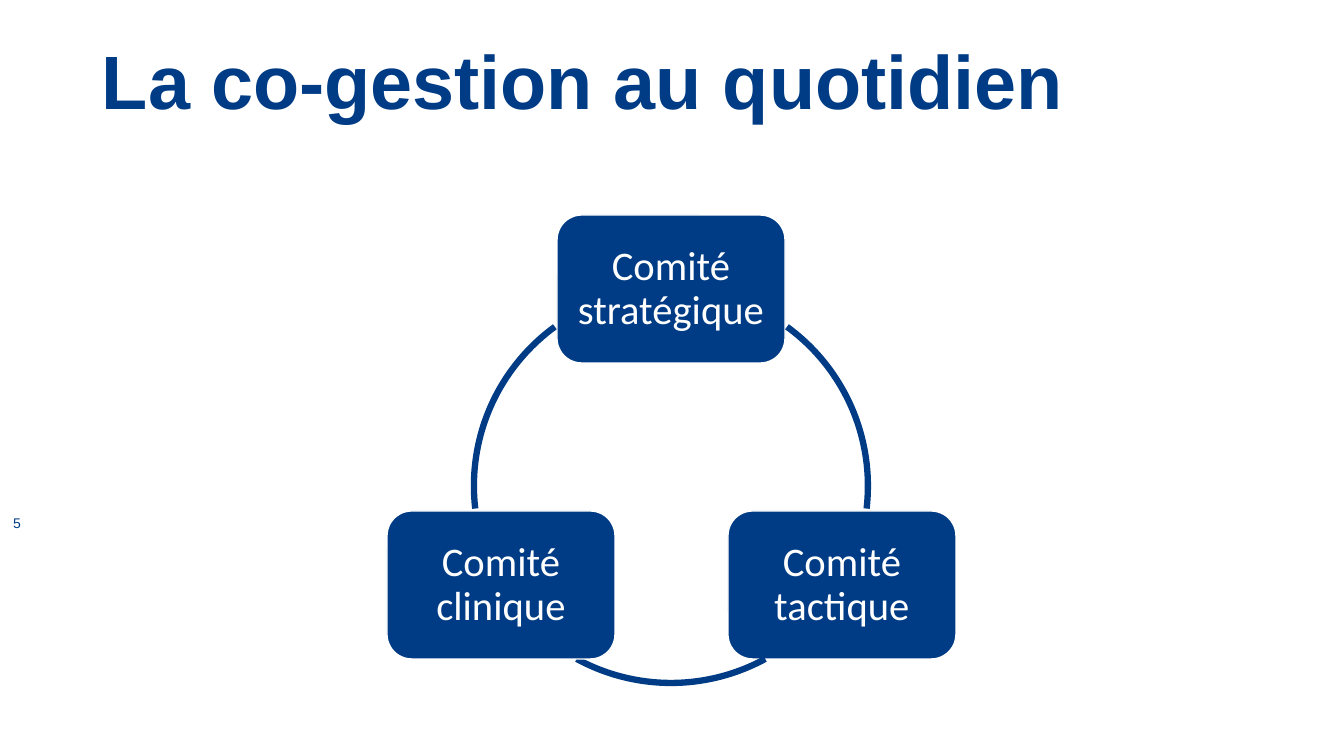
from dataclasses import dataclass

from pptx import Presentation
from pptx.dml.color import RGBColor
from pptx.enum.shapes import MSO_SHAPE
from pptx.enum.text import MSO_ANCHOR, PP_ALIGN
from pptx.shapes.autoshape import Shape
from pptx.slide import Slide
from pptx.util import Emu, Pt

EMU_PER_PX = 914400 / 100.8
NAVY = RGBColor(0x00, 0x3C, 0x85)
WHITE = RGBColor(0xFF, 0xFF, 0xFF)
ROUNDED, ARC = MSO_SHAPE.ROUNDED_RECTANGLE, MSO_SHAPE.ARC
TOP, MIDDLE = MSO_ANCHOR.TOP, MSO_ANCHOR.MIDDLE
LEFT, CENTER = PP_ALIGN.LEFT, PP_ALIGN.CENTER

COMMITTEE_WIDTH, COMMITTEE_HEIGHT = 228, 148
RING_LEFT, RING_TOP, RING_DIAMETER = 474, 289, 394
ARC_UNITS_PER_DEGREE = 0.6  # 60000 angle units per degree, scaled by 100000


@dataclass
class Committee:
    name: str
    left: int
    top: int
    # Ring arc that leaves this committee, clockwise, in degrees
    arc_start: float
    arc_end: float


COMMITTEES = [
    Committee("Comité stratégique", 557, 215, 306.1, 6.6),
    Committee("Comité tactique", 728, 511, 61.4, 118.6),
    Committee("Comité clinique", 387, 511, 173.4, 233.9),
]


def px(length: int) -> Emu:
    return Emu(round(length * EMU_PER_PX))


def write(shape: Shape, text: str, *, font: str = "Arial", size: int,
          color: RGBColor = NAVY, bold: bool = False,
          align: PP_ALIGN = CENTER, anchor: MSO_ANCHOR = MIDDLE,
          inset_x: int = 10, inset_y: int = 5, spacing: float = 1.0) -> None:
    frame = shape.text_frame
    frame.word_wrap = True
    frame.vertical_anchor = anchor
    frame.margin_left = frame.margin_right = px(inset_x)
    frame.margin_top = frame.margin_bottom = px(inset_y)
    paragraph = frame.paragraphs[0]
    paragraph.alignment = align
    paragraph.line_spacing = spacing
    run = paragraph.add_run()
    run.text = text
    run.font.name = font
    run.font.size = Pt(size)
    run.font.bold = bold
    run.font.color.rgb = color


def add_committee(slide: Slide, committee: Committee) -> None:
    box = slide.shapes.add_shape(
        ROUNDED, px(committee.left), px(committee.top),
        px(COMMITTEE_WIDTH), px(COMMITTEE_HEIGHT))
    box.shadow.inherit = False
    box.fill.solid()
    box.fill.fore_color.rgb = NAVY
    box.line.color.rgb = WHITE
    box.line.width = Pt(1)
    write(box, committee.name, font="Calibri", size=29, color=WHITE,
          inset_x=12, inset_y=12, spacing=0.9)


def add_ring_arc(slide: Slide, start: float, end: float) -> None:
    arc = slide.shapes.add_shape(
        ARC, px(RING_LEFT), px(RING_TOP), px(RING_DIAMETER), px(RING_DIAMETER))
    arc.shadow.inherit = False
    arc.adjustments[0] = start * ARC_UNITS_PER_DEGREE
    arc.adjustments[1] = end * ARC_UNITS_PER_DEGREE
    arc.fill.background()
    arc.line.color.rgb = NAVY
    arc.line.width = Pt(4.5)


def main() -> None:
    presentation = Presentation()
    presentation.slide_width, presentation.slide_height = px(1344), px(756)
    slide = presentation.slides.add_slide(presentation.slide_layouts[6])

    # Title and slide number
    title = slide.shapes.add_textbox(px(92), px(33), px(1159), px(147))
    write(title, "La co-gestion au quotidien", size=54, bold=True,
          align=LEFT, anchor=TOP, inset_y=11, spacing=0.9)
    slide_number = slide.shapes.add_textbox(px(0), px(503), px(34), px(40))
    write(slide_number, "5", size=10)

    # Cycle of committees
    for committee in COMMITTEES:
        add_committee(slide, committee)
        add_ring_arc(slide, committee.arc_start, committee.arc_end)

    presentation.save("out.pptx")


if __name__ == "__main__":
    main()
